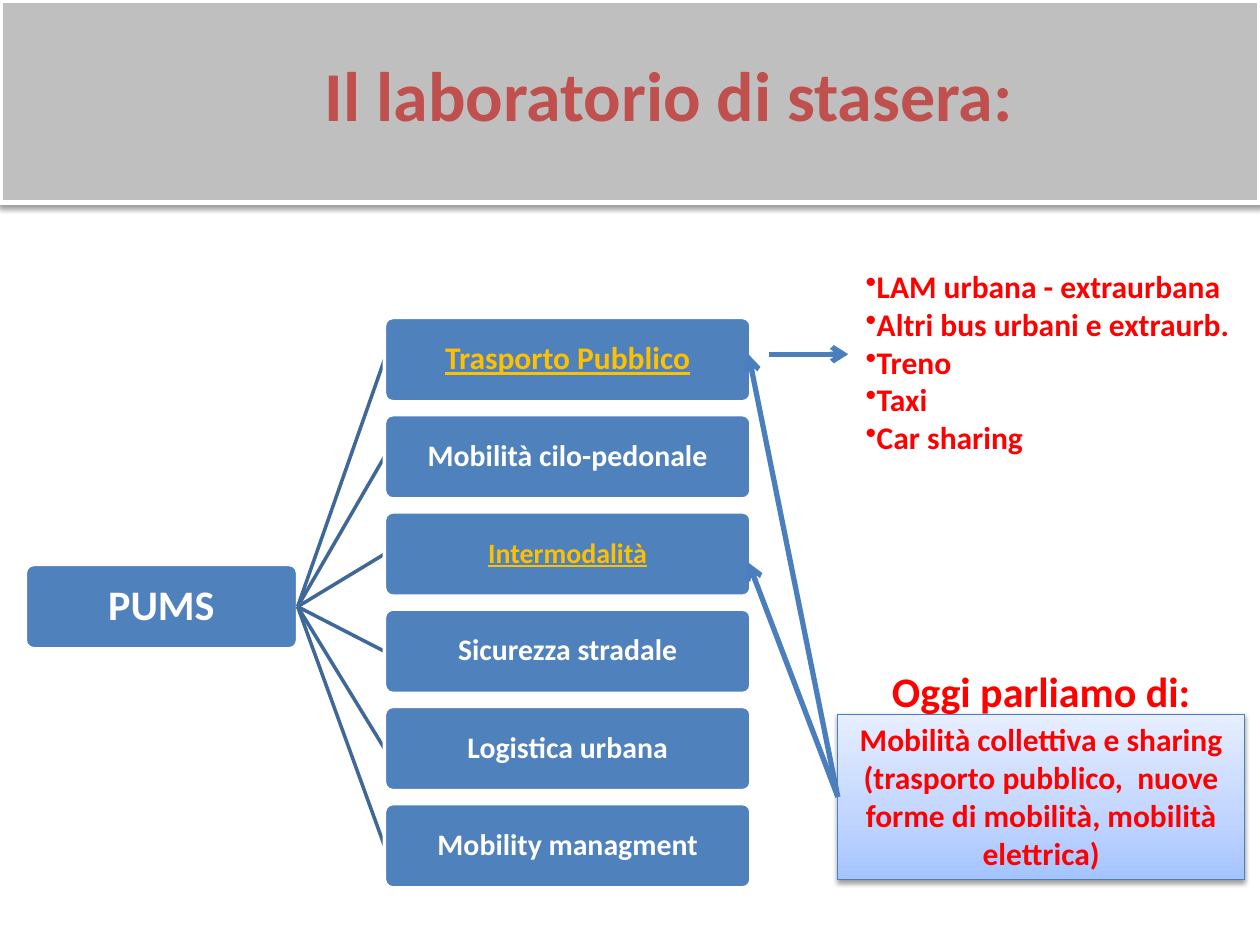
from lxml import etree
from pptx import Presentation
from pptx.dml.color import RGBColor
from pptx.enum.shapes import MSO_CONNECTOR, MSO_SHAPE
from pptx.enum.text import MSO_ANCHOR, MSO_AUTO_SIZE, PP_ALIGN
from pptx.oxml.ns import qn
from pptx.util import Cm, Pt

RECTANGLE = MSO_SHAPE.RECTANGLE
ROUNDED = MSO_SHAPE.ROUNDED_RECTANGLE
STRAIGHT = MSO_CONNECTOR.STRAIGHT
MIDDLE = MSO_ANCHOR.MIDDLE
TOP = MSO_ANCHOR.TOP
FIT_SHAPE = MSO_AUTO_SIZE.SHAPE_TO_FIT_TEXT
CENTER = PP_ALIGN.CENTER
LEFT = PP_ALIGN.LEFT

WHITE = RGBColor(0xFF, 0xFF, 0xFF)
BLACK = RGBColor(0x00, 0x00, 0x00)
GREY = RGBColor(0xBF, 0xBF, 0xBF)
BRICK = RGBColor(0xC0, 0x50, 0x4D)
RED = RGBColor(0xFF, 0x00, 0x00)
GOLD = RGBColor(0xFF, 0xC0, 0x00)
BLUE = RGBColor(0x4F, 0x81, 0xBD)
BRANCH_BLUE = RGBColor(0x3F, 0x67, 0x97)
ARROW_BLUE = RGBColor(0x4B, 0x7E, 0xBC)
NOTE_STOPS = (
    (0, RGBColor(0xA4, 0xC4, 0xFF)),
    (35, RGBColor(0xBF, 0xD4, 0xFF)),
    (100, RGBColor(0xE6, 0xEE, 0xFF)),
)

FONT = "Calibri"
BOX_HEIGHT = 1.7
BRANCH_PITCH = 1.96
BRANCHES = (
    ("Trasporto Pubblico", 18, True),
    ("Mobilità cilo-pedonale", 17, False),
    ("Intermodalità", 16, True),
    ("Sicurezza stradale", 17, False),
    ("Logistica urbana", 17, False),
    ("Mobility managment", 17, False),
)
SERVICES = (
    "LAM urbana - extraurbana",
    "Altri bus urbani e extraurb.",
    "Treno",
    "Taxi",
    "Car sharing",
)


def add_element(parent, tag, **attributes):
    element = etree.SubElement(parent, qn(tag))
    for name, value in attributes.items():
        element.set(name, str(value))
    return element


def add_soft_shadow(shape):
    effects = add_element(shape.element.spPr, "a:effectLst")
    shadow = add_element(effects, "a:outerShdw", blurRad=Pt(3.1), dist=Pt(1.6),
                         dir=5400000, rotWithShape=0)
    color = add_element(shadow, "a:srgbClr", val=BLACK)
    add_element(color, "a:alpha", val=38000)


def set_upward_gradient(shape, stops):
    shape.fill.gradient()
    shape.fill.gradient_angle = 90
    stop_list = shape.element.spPr.find(qn("a:gradFill")).find(qn("a:gsLst"))
    for old_stop in list(stop_list):
        stop_list.remove(old_stop)
    for position, color in stops:
        stop = add_element(stop_list, "a:gs", pos=position * 1000)
        add_element(stop, "a:srgbClr", val=color)


def add_box(slide, kind, left, top, width, height, line_color, line_width, fill=None):
    shape = slide.shapes.add_shape(kind, Cm(left), Cm(top), Cm(width), Cm(height))
    if fill is not None:
        shape.fill.solid()
        shape.fill.fore_color.rgb = fill
    shape.line.color.rgb = line_color
    shape.line.width = Pt(line_width)
    return shape


def add_line(slide, start, end, color, width, arrow=False):
    line = slide.shapes.add_connector(STRAIGHT, *(Cm(value) for value in start + end))
    line.line.color.rgb = color
    line.line.width = Pt(width)
    if arrow:
        add_element(line.line._get_or_add_ln(), "a:tailEnd", type="arrow")
    add_element(line._element.spPr, "a:effectLst")


def write_text(shape, lines, size, color, align=CENTER, anchor=TOP, wrap=True):
    """Fill the shape with bold paragraphs, one for each line, and return them."""
    frame = shape.text_frame
    frame.word_wrap = wrap
    frame.vertical_anchor = anchor
    frame.text = "\n".join(lines)
    for paragraph in frame.paragraphs:
        paragraph.alignment = align
        paragraph.font.name = FONT
        paragraph.font.size = Pt(size)
        paragraph.font.bold = True
        paragraph.font.color.rgb = color
    return frame.paragraphs


def add_label(slide, left, top, width, height, lines, size, color, **options):
    box = slide.shapes.add_textbox(Cm(left), Cm(top), Cm(width), Cm(height))
    paragraphs = write_text(box, lines, size, color, **options)
    box.text_frame.auto_size = FIT_SHAPE
    return paragraphs


def add_title_band(slide, left, top, width, height):
    band = add_box(slide, RECTANGLE, left, top, width, height, WHITE, 3, GREY)
    add_soft_shadow(band)
    add_label(slide, left + 6.3, top + 0.91, 14.86, 1.96,
              ["Il laboratorio di stasera:"], 40, BRICK, align=LEFT, wrap=False)


def add_node(slide, left, top, width, text, size, color, underline=False):
    node = add_box(slide, ROUNDED, left, top, width, BOX_HEIGHT, WHITE, 2, BLUE)
    node.adjustments[0] = 0.1
    node.shadow.inherit = False
    paragraph = write_text(node, [text], size, color, anchor=MIDDLE)[0]
    paragraph.line_spacing = 0.9
    if underline:
        paragraph.font.underline = True
    frame = node.text_frame
    frame.margin_left = frame.margin_right = Cm(0.04)
    frame.margin_top = frame.margin_bottom = Cm(0.04)


def add_plan_tree(slide, left, top):
    root_top, root_width = top + 4.98, 5.49
    branch_left, branch_width = left + 7.24, 7.39
    root_end = (left + root_width, root_top + BOX_HEIGHT / 2)
    add_node(slide, left, root_top, root_width, "PUMS", 24, WHITE)
    for index, (text, size, highlighted) in enumerate(BRANCHES):
        branch_top = top + index * BRANCH_PITCH
        add_line(slide, root_end, (branch_left, branch_top + BOX_HEIGHT / 2),
                 BRANCH_BLUE, 2)
        add_node(slide, branch_left, branch_top, branch_width, text, size,
                 GOLD if highlighted else WHITE, highlighted)


def add_topic_note(slide, left, top, width, height):
    note = add_box(slide, RECTANGLE, left, top, width, height, ARROW_BLUE, 0.75)
    set_upward_gradient(note, NOTE_STOPS)
    add_soft_shadow(note)
    write_text(note, ["Mobilità collettiva e sharing (trasporto pubblico,  nuove forme "
                      "di mobilità, mobilità elettrica)"], 18, RED)
    note.text_frame.auto_size = FIT_SHAPE
    add_label(slide, left, top - 1.1, width, 1.27, ["Oggi parliamo di:"], 24, RED)
    for rise in (8.92, 4.72):
        start = (left, top + height / 2)
        end = (left - 1.8, start[1] - rise)
        add_line(slide, start, end, ARROW_BLUE, 3, arrow=True)


def add_service_list(slide, left, top, width, height):
    arrow_y = top + 1.88
    add_line(slide, (left - 1.7, arrow_y), (left - 0.1, arrow_y), ARROW_BLUE, 3, arrow=True)
    paragraphs = add_label(slide, left, top, width, height, SERVICES, 18, RED, align=LEFT)
    for paragraph in paragraphs:
        properties = paragraph._p.get_or_add_pPr()
        bullet = etree.Element(qn("a:buChar"), char="•")
        properties.insert(0, bullet)


def main():
    presentation = Presentation()
    presentation.slide_width = Cm(25.4)
    presentation.slide_height = Cm(19.05)
    slide = presentation.slides.add_slide(presentation.slide_layouts[6])
    add_title_band(slide, 0, 0, 25.4, 4.09)
    add_plan_tree(slide, 0.51, 6.4)
    add_topic_note(slide, 16.89, 14.4, 8.2, 3.33)
    add_service_list(slide, 17.2, 5.26, 8.3, 4.88)
    presentation.save("out.pptx")


if __name__ == "__main__":
    main()
